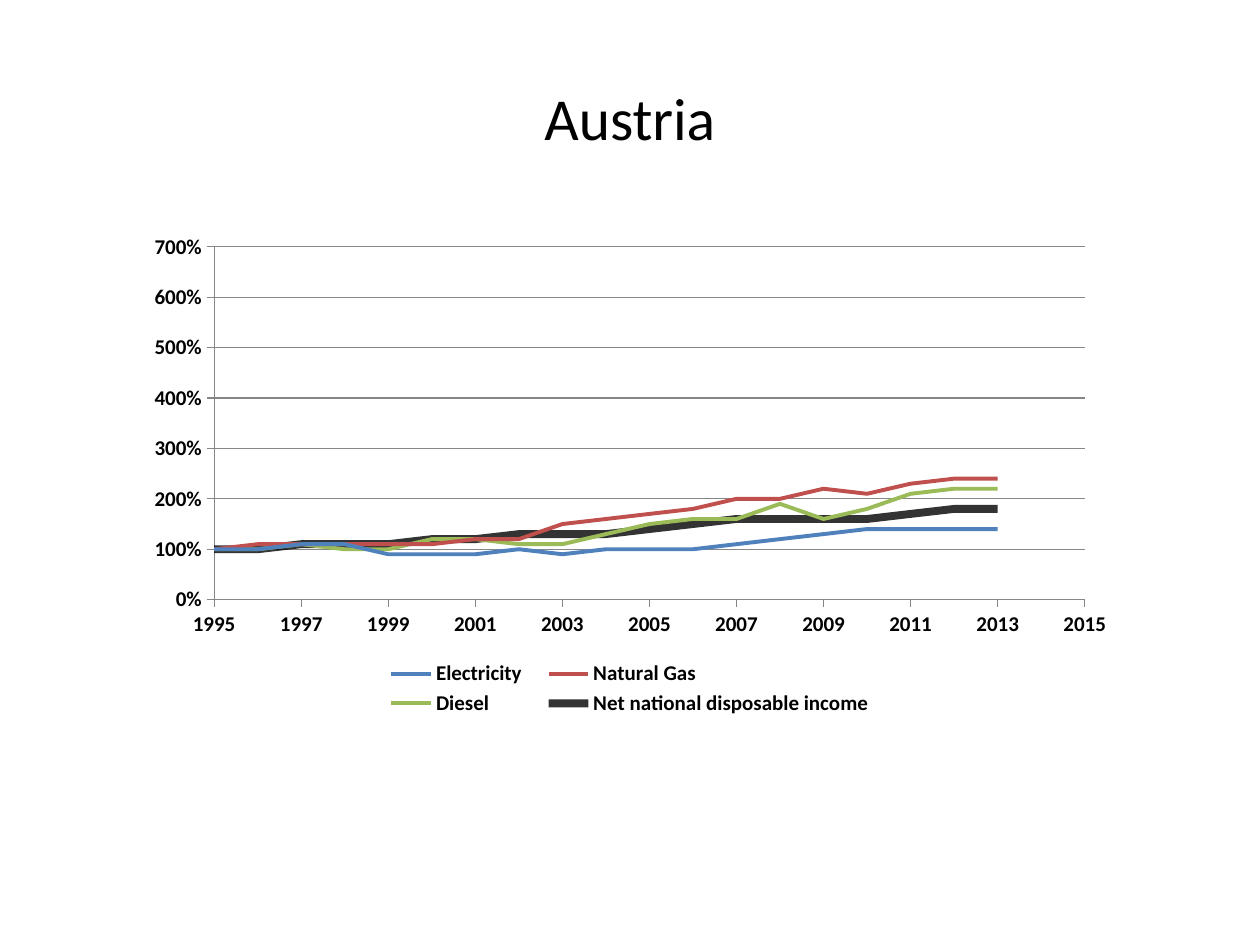
from dataclasses import dataclass

from lxml import etree
from pptx import Presentation
from pptx import util as u
from pptx.chart.data import XyChartData
from pptx.dml.color import RGBColor
from pptx.enum import chart as charts, text
from pptx.oxml import parse_xml
from pptx.oxml.ns import nsdecls, qn

FONT = "Calibri"
BLACK, GRAY = "000000", "868686"
FIRST_YEAR, LAST_YEAR = 1995, 2015
CHART_WIDTH, CHART_HEIGHT = 7.87, 3.94


@dataclass
class Trend:
    name: str
    color: str
    values: list[float]
    width: float = 2.25
    opacity: int = 100


TRENDS = [
    Trend("Electricity", "4F81BD",
          [1, 1, 1.1, 1.1, 0.9, 0.9, 0.9, 1, 0.9, 1, 1, 1, 1.1, 1.2, 1.3, 1.4, 1.4, 1.4, 1.4]),
    Trend("Natural Gas", "C0504D",
          [1, 1.1, 1.1, 1.1, 1.1, 1.1, 1.2, 1.2, 1.5, 1.6, 1.7, 1.8, 2, 2, 2.2, 2.1, 2.3, 2.4, 2.4]),
    Trend("Diesel", "9BBB59",
          [1, 1, 1.1, 1, 1, 1.2, 1.2, 1.1, 1.1, 1.3, 1.5, 1.6, 1.6, 1.9, 1.6, 1.8, 2.1, 2.2, 2.2]),
    Trend("Net national disposable income", BLACK,
          [1, 1, 1.1, 1.1, 1.1, 1.2, 1.2, 1.3, 1.3, 1.3, 1.4, 1.5, 1.6, 1.6, 1.6, 1.6, 1.7, 1.8, 1.8],
          4.5, 80),
]


def rgb(color: str) -> RGBColor:
    return RGBColor.from_string(color)


def set_format(target, values: dict) -> None:
    for name, value in values.items():
        setattr(target, name, value)


def set_font(font, size: float, bold: bool = False) -> None:
    set_format(font, {"name": FONT, "size": u.Pt(size), "bold": bold})
    font.color.rgb = rgb(BLACK)


def set_line(line, color: str, width: float) -> None:
    line.color.rgb = rgb(color)
    line.width = u.Pt(width)


def manual_layout(left: float, top: float, width: float, height: float, inner: bool = False):
    """Return a c:layout element for a place given in inches within the chart."""
    target = '<c:layoutTarget val="inner"/>' if inner else ""
    fractions = {"x": left / CHART_WIDTH, "y": top / CHART_HEIGHT,
                 "w": width / CHART_WIDTH, "h": height / CHART_HEIGHT}
    sizes = "".join(f'<c:{key} val="{value:.4f}"/>' for key, value in fractions.items())
    return parse_xml(f'<c:layout {nsdecls("c")}><c:manualLayout>{target}'
                     '<c:xMode val="edge"/><c:yMode val="edge"/>'
                     f'{sizes}</c:manualLayout></c:layout>')


def add_title(slide, title: str) -> None:
    box = slide.shapes.add_textbox(u.Inches(0.5), u.Inches(0.3), u.Inches(9), u.Inches(1.25))
    set_format(box.text_frame, {"word_wrap": True, "vertical_anchor": text.MSO_ANCHOR.MIDDLE})
    paragraph = box.text_frame.paragraphs[0]
    set_format(paragraph, {"text": title, "alignment": text.PP_ALIGN.CENTER})
    set_font(paragraph.runs[0].font, 34)


def format_axis(axis, minimum: float, maximum: float, unit: float, number_format: str) -> None:
    set_format(axis, {"minimum_scale": minimum, "maximum_scale": maximum, "major_unit": unit,
                      "major_tick_mark": charts.XL_TICK_MARK.OUTSIDE,
                      "minor_tick_mark": charts.XL_TICK_MARK.NONE,
                      "has_major_gridlines": False})
    set_format(axis.tick_labels, {"number_format": number_format,
                                  "number_format_is_linked": False})
    set_font(axis.tick_labels.font, 12, True)
    set_line(axis.format.line, GRAY, 0.75)


def format_series(series, trend: Trend) -> None:
    series.smooth = False
    series.marker.style = charts.XL_MARKER_STYLE.NONE
    set_line(series.format.line, trend.color, trend.width)
    if trend.opacity < 100:
        color = next(series.format.line._ln.iter(qn("a:srgbClr")))
        etree.SubElement(color, qn("a:alpha"), val=str(trend.opacity * 1000))


def add_trend_chart(slide, trends: list[Trend]) -> None:
    data = XyChartData()
    for trend in trends:
        points = data.add_series(trend.name, number_format="0%")
        for year, value in enumerate(trend.values, FIRST_YEAR):
            points.add_data_point(year, value)
    chart = slide.shapes.add_chart(
        charts.XL_CHART_TYPE.XY_SCATTER_LINES_NO_MARKERS, u.Inches(1.06), u.Inches(1.78),
        u.Inches(CHART_WIDTH), u.Inches(CHART_HEIGHT), data).chart
    set_format(chart, {"has_title": False, "has_legend": True})
    set_font(chart.font, 10)
    chart.plots[0].vary_by_categories = False

    format_axis(chart.category_axis, FIRST_YEAR, LAST_YEAR, 2, "0")
    format_axis(chart.value_axis, 0, 7, 1, "0%")
    chart.value_axis.has_major_gridlines = True
    set_line(chart.value_axis.major_gridlines.format.line, GRAY, 0.75)
    for series, trend in zip(chart.plots[0].series, trends):
        format_series(series, trend)

    legend = chart.legend
    set_format(legend, {"position": charts.XL_LEGEND_POSITION.BOTTOM, "include_in_layout": False})
    set_font(legend.font, 12, True)
    plot_area = chart._chartSpace.chart.plotArea
    for layout in plot_area.findall(qn("c:layout")):
        plot_area.remove(layout)
    plot_area.insert(0, manual_layout(0.64, 0.18, 6.91, 2.8, inner=True))
    for layout in legend._element.findall(qn("c:layout")):
        legend._element.remove(layout)
    legend._element.find(qn("c:legendPos")).addnext(manual_layout(1.89, 3.43, 4.1, 0.51))


def main() -> None:
    presentation = Presentation()
    set_format(presentation, {"slide_width": u.Inches(10), "slide_height": u.Inches(7.5)})
    slide = presentation.slides.add_slide(presentation.slide_layouts[6])
    add_title(slide, "Austria")
    add_trend_chart(slide, TRENDS)
    presentation.save("out.pptx")


if __name__ == "__main__":
    main()
